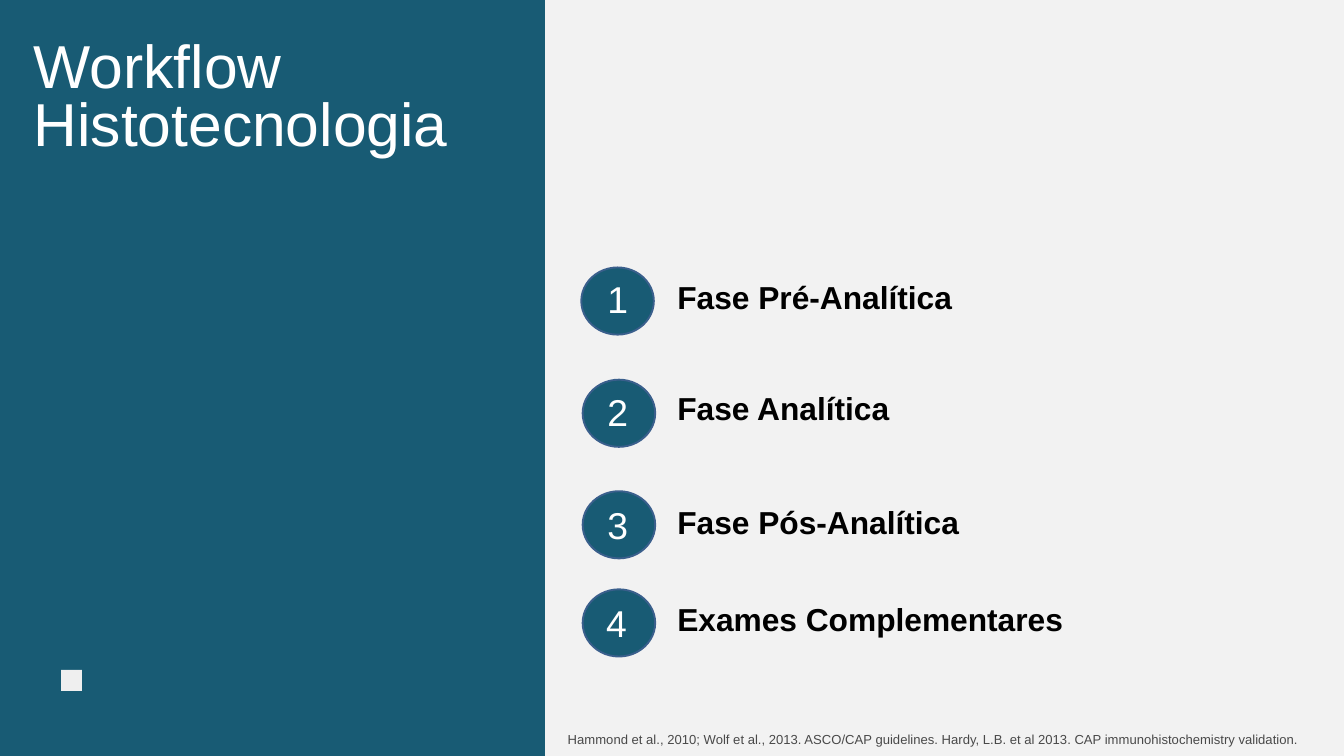
"""Build the histotechnology workflow slide with its four numbered phases."""
from pptx import Presentation
from pptx.dml.color import RGBColor
from pptx.enum.shapes import MSO_SHAPE as Shape
from pptx.enum.text import MSO_AUTO_SIZE as AutoSize, PP_ALIGN as Align
from pptx.util import Inches, Pt

TEAL = RGBColor(0x18, 0x5B, 0x74)
OUTLINE = RGBColor(0x3A, 0x5F, 0x8C)
PAPER = RGBColor(0xF2, 0xF2, 0xF2)
MARK = RGBColor(0xEF, 0xEF, 0xEF)
WHITE = RGBColor(0xFF, 0xFF, 0xFF)
BLACK = RGBColor(0x00, 0x00, 0x00)
GREY = RGBColor(0x49, 0x49, 0x49)

deck = Presentation()
deck.slide_width, deck.slide_height = Inches(20), Inches(11.25)
COL = deck.slide_width / 20
ROW = deck.slide_height / 11.25
slide = deck.slides.add_slide(deck.slide_layouts[6])
slide.background.fill.solid()
slide.background.fill.fore_color.rgb = PAPER


def add_block(kind, left, top, width, height, color, outline=None):
    block = slide.shapes.add_shape(
        kind, int(left * COL), int(top * ROW), int(width * COL), int(height * ROW))
    block.shadow.inherit = False
    block.fill.solid()
    block.fill.fore_color.rgb = color
    if outline is None:
        block.line.fill.background()
    else:
        block.line.color.rgb = outline
        block.line.width = Pt(2)


def add_text(lines, left, top, width, height, size, color,
             spacing=None, bold=False, align=Align.LEFT, inset=0, wrap=True):
    frame = slide.shapes.add_textbox(
        int(left * COL), int(top * ROW), int(width * COL), int(height * ROW)).text_frame
    frame.word_wrap = wrap
    frame.auto_size = AutoSize.SHAPE_TO_FIT_TEXT
    frame.margin_left = frame.margin_right = Inches(inset)
    frame.margin_top = frame.margin_bottom = Inches(inset / 2)
    frame.text = "\n".join(lines)
    for paragraph in frame.paragraphs:
        paragraph.alignment = align
        if spacing:
            paragraph.line_spacing = Pt(spacing)
        font = paragraph.font
        font.name, font.size, font.bold = "Arial", Pt(size), bold
        font.color.rgb = color


add_block(Shape.RECTANGLE, -0.26, -0.18, 8.37, 11.61, TEAL)
add_text(["Workflow", "Histotecnologia"], 0.5, 0.62, 7.48, 1.77, 64.9, WHITE, 62.9)
add_block(Shape.RECTANGLE, 0.91, 9.97, 0.31, 0.31, MARK)

phases = [
    ("Fase Pré-Analítica", 8.65, 3.98, 8.73, 4.11, 4.25, 5.49),
    ("Fase Analítica", 8.67, 5.65, 8.73, 5.78, 5.89, 5.49),
    ("Fase Pós-Analítica", 8.67, 7.31, 8.73, 7.47, 7.59, 5.49),
    ("Exames Complementares", 8.67, 8.77, 8.71, 8.93, 9.04, 7.67),
]
for number, phase in enumerate(phases, start=1):
    name, circle_left, circle_top, number_left, number_top, name_top, name_width = phase
    add_block(Shape.OVAL, circle_left, circle_top, 1.08, 1, TEAL, OUTLINE)
    add_text([str(number)], number_left, number_top, 0.93, 0.69, 40, WHITE, 48.5,
             align=Align.CENTER)
    add_text([name], 10.08, name_top, name_width, 0.47, 34, BLACK, 32.8, bold=True)

references = ("Hammond et al., 2010; Wolf et al., 2013. ASCO/CAP guidelines. "
              "Hardy, L.B. et al 2013. CAP immunohistochemistry validation.")
add_text([references], 8.35, 10.84, 11.13, 0.34, 14, GREY, inset=0.1, wrap=False)

deck.save("out.pptx")
